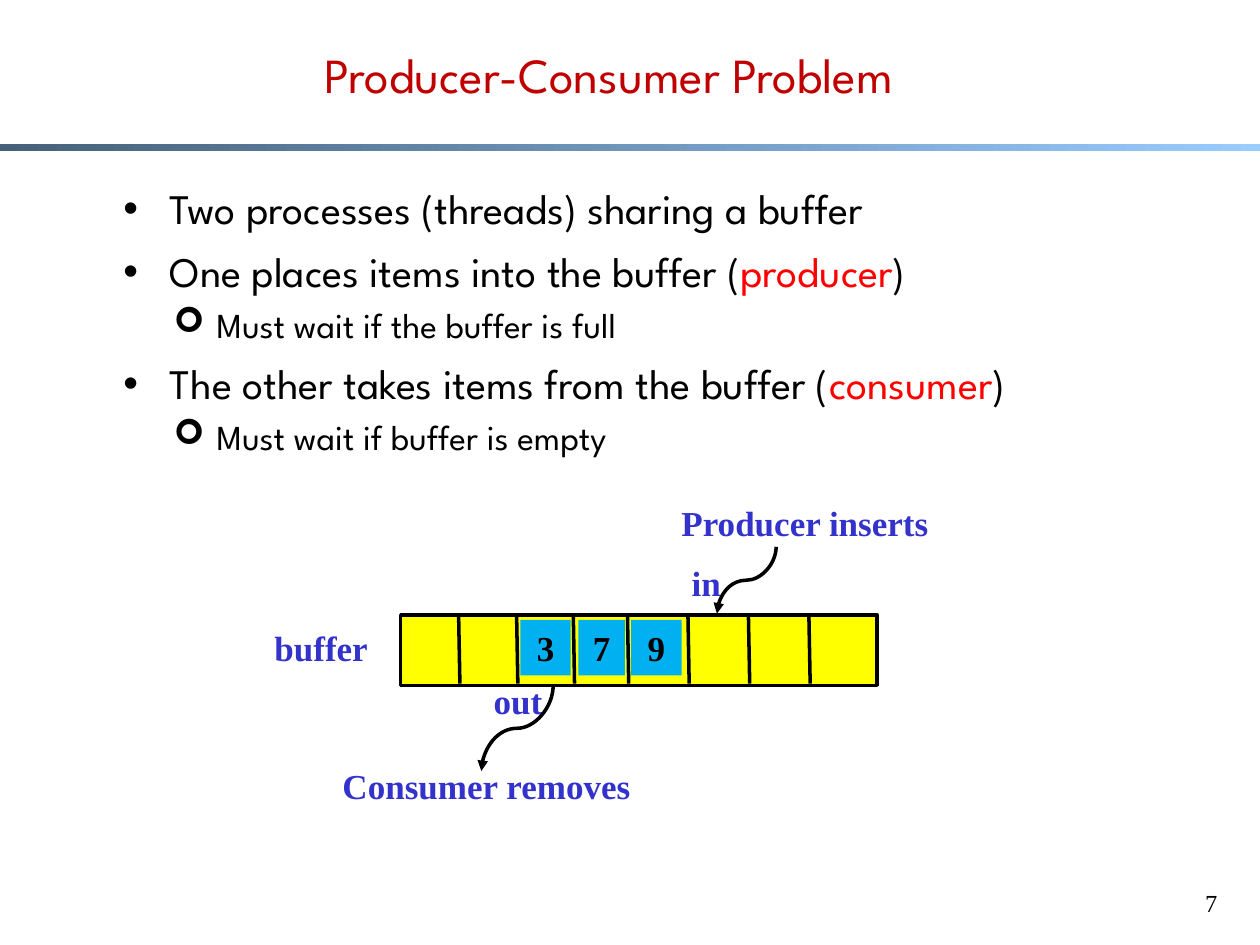
import pptx
import pptx.util
import pptx.dml.color
import pptx.enum.dml
import pptx.enum.shapes
import pptx.enum.text
import pptx.oxml.ns
import lxml.etree

COLUMNS, ROWS = 100, 75
SLIDE_WIDTH, SLIDE_HEIGHT = pptx.util.Inches(10), pptx.util.Inches(7.5)
HEADING_FONT, DIAGRAM_FONT = "League Spartan", "Times New Roman"
BLACK, INK_BLUE, RED = "000000", "3333CC", "FF0000"
ALIGN = pptx.enum.text.PP_ALIGN
SHAPES = pptx.enum.shapes.MSO_SHAPE
CONNECTORS = pptx.enum.shapes.MSO_CONNECTOR


def color(value):
    return pptx.dml.color.RGBColor.from_string(value)


def across(columns):
    return round(SLIDE_WIDTH * columns / COLUMNS)


def down(rows):
    return round(SLIDE_HEIGHT * rows / ROWS)


def place(box):
    left, top, width, height = box
    return across(left), down(top), across(width), down(height)


def within(box, left, top, width, height):
    return box[0] + left, box[1] + top, width, height


def child(parent, tag, **attributes):
    return lxml.etree.SubElement(parent, pptx.oxml.ns.qn(tag), attributes)


def add_run(paragraph, words, size, font, ink, bold=False):
    run = paragraph.add_run()
    run.text = words
    run.font.size = pptx.util.Pt(size)
    run.font.name = font
    run.font.bold = bold
    run.font.color.rgb = color(ink)


def add_block(slide, box, fill=None):
    block = slide.shapes.add_shape(SHAPES.RECTANGLE, *place(box))
    block.shadow.inherit = False
    block.line.fill.background()
    if fill:
        block.fill.solid()
        block.fill.fore_color.rgb = color(fill)
    return block


def add_label(slide, box, words, size=20, ink=INK_BLUE, bold=True, align=ALIGN.LEFT):
    label = slide.shapes.add_textbox(*place(box))
    label.text_frame.word_wrap = False
    paragraph = label.text_frame.paragraphs[0]
    paragraph.alignment = align
    add_run(paragraph, words, size, DIAGRAM_FONT, ink, bold)


def add_stroke(slide, kind, start, end):
    stroke = slide.shapes.add_connector(
        kind, across(start[0]), down(start[1]), across(end[0]), down(end[1]))
    stroke.line.color.rgb = color(BLACK)
    stroke.line.width = pptx.util.Pt(2)
    child(stroke.element.spPr, "a:effectLst")
    return stroke


def add_falling_arrow(slide, start, end):
    center_x, center_y = (start[0] + end[0]) / 2, (start[1] + end[1]) / 2
    half_run, half_fall = abs(start[0] - end[0]) / 2, abs(start[1] - end[1]) / 2
    arrow = add_stroke(slide, CONNECTORS.CURVE,
                       (center_x - half_fall, center_y - half_run),
                       (center_x + half_fall, center_y + half_run))
    arrow.element.spPr.find(pptx.oxml.ns.qn("a:xfrm")).set("rot", "5400000")
    child(arrow.line._get_or_add_ln(), "a:tailEnd", type="triangle")


def build_header(slide, box):
    rule = add_block(slide, within(box, 0, 11.4, box[2], 0.6))
    rule.fill.gradient()
    rule.fill.gradient_angle = 0
    for stop, shade, position in zip(rule.fill.gradient_stops, ("46617A", "99CCFF"), (0, 1)):
        stop.color.rgb = color(shade)
        stop.position = position

    title = slide.shapes.add_textbox(*place(within(box, 5.8, 1.3, 85, 9.1)))
    title.text_frame.word_wrap = True
    title.text_frame.vertical_anchor = pptx.enum.text.MSO_ANCHOR.MIDDLE
    heading = title.text_frame.paragraphs[0]
    heading.alignment = ALIGN.CENTER
    add_run(heading, "Producer-Consumer Problem", 28, HEADING_FONT, "C00000")


def build_points(slide, box):
    levels = [(24, 0.37, 0.37, "30000", "•", "Arial"),
              (20, 0.74, 0.34, "20000", "➢", "Wingdings")]
    points = [
        (0, [("Two processes (threads) sharing a buffer", BLACK)]),
        (0, [("One places items into the buffer (", BLACK), ("producer", RED), (")", BLACK)]),
        (1, [("Must wait if the buffer is full", BLACK)]),
        (0, [("The other takes items from the buffer (", BLACK), ("consumer", RED), (")", BLACK)]),
        (1, [("Must wait if buffer is empty", BLACK)]),
    ]
    frame = slide.shapes.add_textbox(*place(box)).text_frame
    frame.word_wrap = True
    for number, (level, pieces) in enumerate(points):
        paragraph = frame.add_paragraph() if number else frame.paragraphs[0]
        paragraph.level = level
        size, margin, hang, gap, bullet, bullet_font = levels[level]
        settings = paragraph._p.get_or_add_pPr()
        settings.set("marL", str(pptx.util.Inches(margin)))
        settings.set("indent", str(-pptx.util.Inches(hang)))
        child(child(settings, "a:spcBef"), "a:spcPct", val=gap)
        child(child(settings, "a:buClr"), "a:srgbClr", val=BLACK)
        child(settings, "a:buFont", typeface=bullet_font)
        child(settings, "a:buChar", char=bullet)
        for words, ink in pieces:
            add_run(paragraph, words, size, HEADING_FONT, ink)


def build_buffer(slide, box):
    left, top, width, height = box
    store = add_block(slide, box, "FFFF00")
    store.line.color.rgb = color(BLACK)
    store.line.width = pptx.util.Pt(2)

    for divider in (4.6, 9.2, 13.7, 18, 22.8, 27.6, 32.4):
        add_stroke(slide, CONNECTORS.STRAIGHT,
                   (left + divider, top), (left + divider + 0.1, top + 5.45))

    for item, offset, item_width in (("3", 9.5, 4), ("7", 14.1, 3.7), ("9", 18.3, 4)):
        cell = add_block(slide, within(box, offset, 0.4, item_width, 4.4), "00B0F0")
        cell.text_frame.word_wrap = False
        paragraph = cell.text_frame.paragraphs[0]
        paragraph.alignment = ALIGN.CENTER
        add_run(paragraph, item, 20, DIAGRAM_FONT, BLACK, True)

    for words, offset, drop, label_width in (
            ("in", 22.1, -4.7, 5.9), ("out", 6.4, 4.6, 5.9),
            ("Producer inserts", 21.3, -9.5, 22.3),
            ("Consumer removes", -5.6, 11.4, 25), ("buffer", -11, 0.4, 10.4)):
        add_label(slide, within(box, offset, drop, label_width, 4.4), words)

    add_falling_arrow(slide, (left + 29.8, top - 5.4), (left + 25.1, top - 0.1))
    add_falling_arrow(slide, (left + 12.1, top + height), (left + 6.4, top + 12.4))


def build_page_number(slide, box):
    add_label(slide, box, "7", 14, BLACK, False, ALIGN.RIGHT)


def main():
    deck = pptx.Presentation()
    deck.slide_width, deck.slide_height = SLIDE_WIDTH, SLIDE_HEIGHT
    slide = deck.slides.add_slide(deck.slide_layouts[6])
    build_header(slide, (0, 0, COLUMNS, 12))
    build_points(slide, (8.8, 14, 85.2, 31.1))
    build_buffer(slide, (31.8, 48.8, 37.8, 5.6))
    build_page_number(slide, (90.8, 70, 6.8, 5))
    deck.save("out.pptx")


if __name__ == "__main__":
    main()
